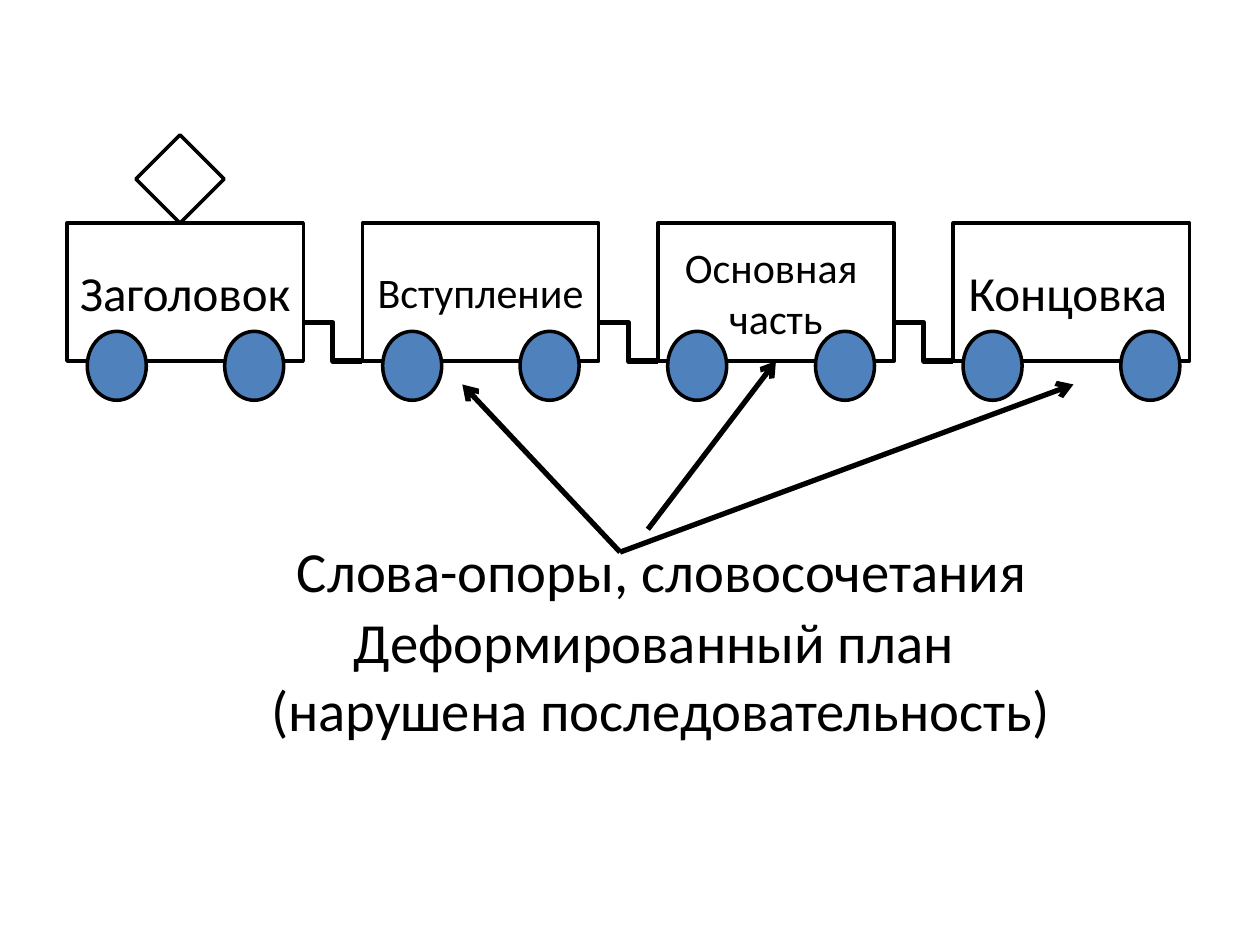
from lxml import etree
from pptx import Presentation
from pptx.dml.color import RGBColor
from pptx.enum.shapes import MSO_CONNECTOR, MSO_SHAPE
from pptx.enum.text import MSO_ANCHOR, PP_ALIGN
from pptx.oxml.ns import qn
from pptx.util import Cm, Pt

BLACK = RGBColor(0x00, 0x00, 0x00)
WHITE = RGBColor(0xFF, 0xFF, 0xFF)
BLUE = RGBColor(0x4F, 0x81, 0xBD)
RECT, OVAL, DIAMOND = MSO_SHAPE.RECTANGLE, MSO_SHAPE.OVAL, MSO_SHAPE.DIAMOND
STRAIGHT, ELBOW = MSO_CONNECTOR.STRAIGHT, MSO_CONNECTOR.ELBOW
MIDDLE, CENTER = MSO_ANCHOR.MIDDLE, PP_ALIGN.CENTER
BOTTOM = 2

# Car text (paragraphs of (text, size) runs) and left offsets of the wheels
CARS = [
    ([[("Заголовок", 28), (" ", 18)]], (0.41, 3.18)),
    ([[("Вступление ", 24)]], (0.41, 3.18)),
    ([[("Основная ", 24)], [("часть", 24)]], (0.2, 3.18)),
    ([[("Концовка", 28), (" ", 18)]], (0.2, 3.38)),
]
CAPTION = [[
    (" ", 39.6),
    ("Слова-опоры, словосочетания Деформированный план\v"
     " (нарушена последовательность)", 32.4),
]]


def write(shape, paras):
    frame = shape.text_frame
    frame.word_wrap = True
    frame.vertical_anchor = MIDDLE
    for i, runs in enumerate(paras):
        para = frame.add_paragraph() if i else frame.paragraphs[0]
        para.alignment = CENTER
        # A vertical tab in the text marks a line break
        for text, size in runs:
            for j, part in enumerate(text.split("\v")):
                if j:
                    para.add_line_break()
                run = para.add_run()
                run.text = part
                run.font.name = "Calibri"
                run.font.size = Pt(size)
                run.font.color.rgb = BLACK


def draw(slide, kind, x, y, w, h, fill):
    shape = slide.shapes.add_shape(kind, Cm(x), Cm(y), Cm(w), Cm(h))
    shape.shadow.inherit = False
    shape.fill.solid()
    shape.fill.fore_color.rgb = fill
    shape.line.color.rgb = BLACK
    shape.line.width = Pt(2)
    return shape


def link(slide, kind, x1, y1, x2, y2):
    line = slide.shapes.add_connector(kind, Cm(x1), Cm(y1), Cm(x2), Cm(y2))
    line.line.color.rgb = BLACK
    line.line.width = Pt(3)
    etree.SubElement(line._element.spPr, qn("a:effectLst"))
    return line


def arrow(slide, x1, y1, x2, y2):
    line = link(slide, STRAIGHT, x1, y1, x2, y2)
    etree.SubElement(line.line._get_or_add_ln(), qn("a:tailEnd"), type="arrow")
    return line


def add_car(slide, x, y, w, h, paras, wheels):
    body = draw(slide, RECT, x, y, w, h, WHITE)
    write(body, paras)
    for dx in wheels:
        draw(slide, OVAL, x + dx, y + 2.18, 1.19, 1.39, BLUE)
    return body


def add_train(slide, x, y, w, h):
    gap = 1.19
    wide = (w - gap * (len(CARS) - 1)) / len(CARS)
    # Current collector on the first car
    draw(slide, DIAMOND, x + 1.39, y - 1.78, 1.78, 1.78, WHITE)
    cars = []
    for i, (paras, wheels) in enumerate(CARS):
        left = x + i * (wide + gap)
        # Coupling to the car in front
        if i:
            link(slide, ELBOW, left - gap, y + 2, left, y + h)
        cars.append(add_car(slide, left, y, wide, h, paras, wheels))
    return cars


def add_caption(slide, x, y, w, h):
    box = slide.shapes.add_textbox(Cm(x), Cm(y), Cm(w), Cm(h))
    write(box, CAPTION)


def add_arrows(slide, x, y, car):
    # Arrows fan out from the caption to the last three cars
    arrow(slide, x + 0.56, y - 0.46, x + 3.15, y - 3.84).end_connect(car, BOTTOM)
    for dx in (9.14, -3.18):
        arrow(slide, x, y, x + dx, y - 3.38)


def main():
    deck = Presentation()
    deck.slide_width, deck.slide_height = Cm(25.4), Cm(19.05)
    slide = deck.slides.add_slide(deck.slide_layouts[6])
    add_caption(slide, 2.39, 10.72, 21.59, 4.09)
    cars = add_train(slide, 1.35, 4.5, 22.63, 2.78)
    add_arrows(slide, 12.5, 11.13, cars[2])
    deck.save("out.pptx")


if __name__ == "__main__":
    main()
